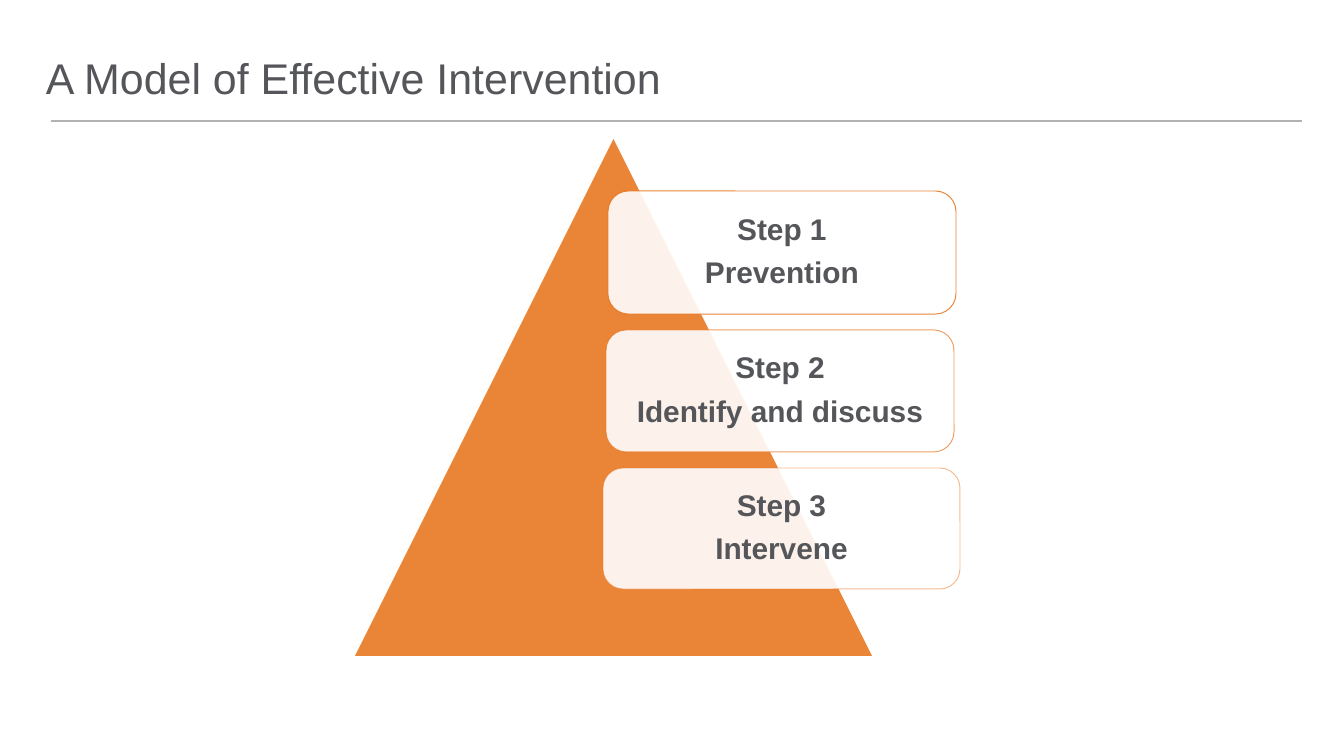
from lxml import etree
from pptx import Presentation
from pptx.dml.color import RGBColor
from pptx.enum.shapes import MSO_CONNECTOR, MSO_SHAPE
from pptx.enum.text import MSO_ANCHOR, MSO_AUTO_SIZE, PP_ALIGN
from pptx.oxml.ns import qn
from pptx.util import Pt

TITLE = "A Model of Effective Intervention"
# heading, action, (left, top, width, height) in px, outline opacity in percent
STEPS = [
    ("Step 1", "Prevention", (608, 191, 348, 123), 90),
    ("Step 2", "Identify and discuss", (606, 330, 348, 122), 70),
    ("Step 3", "Intervene", (603, 468, 357, 121), 50),
]
TITLE_BOX = (46, 56, 907, 48)
PYRAMID_BOX = (355, 139, 517, 517)
RULE_ENDS = (51, 121, 1302, 121)
SLIDE_SIZE = (1344, 756)
PADDING = 15
FILL_OPACITY = 90

ORANGE = RGBColor(0xE8, 0x77, 0x22)
WHITE = RGBColor(0xFF, 0xFF, 0xFF)
DARK_GREY = RGBColor(0x55, 0x56, 0x5A)
RULE_GREY = RGBColor(0xB1, 0xB3, 0xB3)
FONT = "Arial"
TITLE_ONLY = 5
TRIANGLE = MSO_SHAPE.ISOSCELES_TRIANGLE
ROUNDED = MSO_SHAPE.ROUNDED_RECTANGLE
STRAIGHT = MSO_CONNECTOR.STRAIGHT
LEFT, CENTER = PP_ALIGN.LEFT, PP_ALIGN.CENTER
BOTTOM, MIDDLE = MSO_ANCHOR.BOTTOM, MSO_ANCHOR.MIDDLE
NO_AUTOFIT = MSO_AUTO_SIZE.NONE


def px(*lengths):
    """Turn pixels (134.4 to the inch) into EMU."""
    return [round(length * 914400 / 134.4) for length in lengths]


def set_opacity(parent, percent):
    """Make the solid colour inside a shape's spPr or line partly transparent."""
    color = parent.find(qn("a:solidFill")).find(qn("a:srgbClr"))
    etree.SubElement(color, qn("a:alpha")).set("val", str(percent * 1000))


def add_filled_shape(slide, kind, box, color):
    shape = slide.shapes.add_shape(kind, *px(*box))
    shape.shadow.inherit = False
    shape.fill.solid()
    shape.fill.fore_color.rgb = color
    set_opacity(shape._element.spPr, FILL_OPACITY)
    return shape


def set_text(shape, lines, size, bold, align, anchor, padding, space_after):
    frame = shape.text_frame
    frame.text = "\n".join(lines)
    frame.word_wrap = True
    frame.auto_size = NO_AUTOFIT
    frame.vertical_anchor = anchor
    frame.margin_left, frame.margin_top, frame.margin_right, frame.margin_bottom = px(*[padding] * 4)
    for paragraph in frame.paragraphs:
        paragraph.alignment = align
        paragraph.line_spacing = 0.9
        paragraph.space_before = Pt(0)
        paragraph.space_after = Pt(space_after)
        font = paragraph.runs[0].font
        font.name, font.size, font.bold = FONT, Pt(size), bold
        font.color.rgb = DARK_GREY


def add_title(slide):
    title = slide.shapes.title
    title.left, title.top, title.width, title.height = px(*TITLE_BOX)
    set_text(title, [TITLE], 23, False, LEFT, BOTTOM, 0, 0)


def add_rule(slide):
    rule = slide.shapes.add_connector(STRAIGHT, *px(*RULE_ENDS))
    rule.line.color.rgb = RULE_GREY
    rule.line.width = Pt(1)
    etree.SubElement(rule._element.spPr, qn("a:effectLst"))


def add_step(slide, heading, action, box, line_opacity):
    step = add_filled_shape(slide, ROUNDED, box, WHITE)
    step.line.color.rgb = ORANGE
    step.line.width = Pt(0.5)
    set_opacity(step._element.spPr.find(qn("a:ln")), line_opacity)
    set_text(step, [heading, action], 16, True, CENTER, MIDDLE, PADDING, 6)


def main():
    presentation = Presentation()
    presentation.slide_width, presentation.slide_height = px(*SLIDE_SIZE)
    slide = presentation.slides.add_slide(presentation.slide_layouts[TITLE_ONLY])
    add_rule(slide)
    add_title(slide)
    pyramid = add_filled_shape(slide, TRIANGLE, PYRAMID_BOX, ORANGE)
    pyramid.line.fill.background()
    for step in STEPS:
        add_step(slide, *step)
    presentation.save("out.pptx")


if __name__ == "__main__":
    main()
